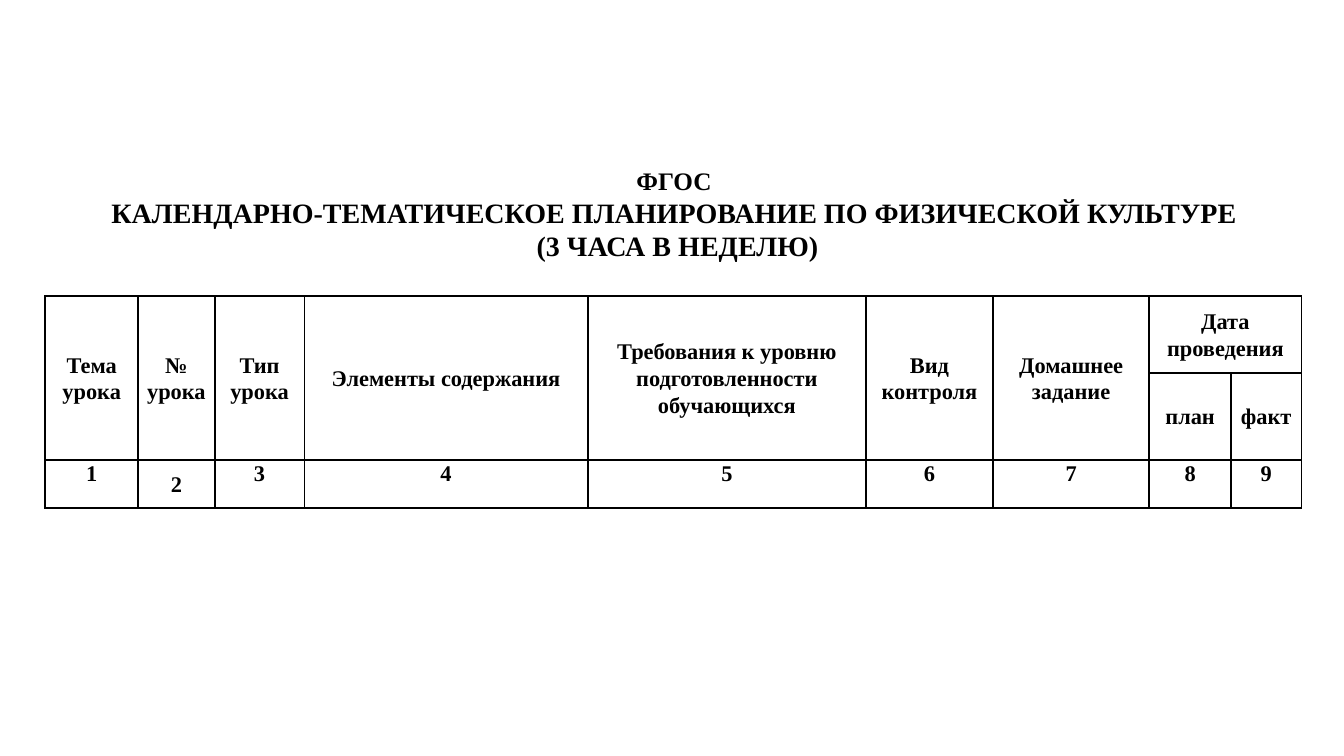
from dataclasses import dataclass

from lxml.etree import SubElement
from pptx import Presentation
from pptx.dml.color import RGBColor
from pptx.enum.text import MSO_ANCHOR, MSO_AUTO_SIZE, PP_ALIGN
from pptx.oxml.ns import qn
from pptx.slide import Slide
from pptx.table import Table, _Cell
from pptx.text.text import TextFrame
from pptx.util import Inches, Pt


@dataclass(frozen=True)
class Theme:
    font: str = "Times New Roman"
    ink: str = "000000"
    small_title: int = 18
    title: int = 20
    table: int = 16
    table_spacing: float = 1.07
    thick: float = 1.5
    thin: float = 1


@dataclass(frozen=True)
class Heading:
    text: str
    row: int
    column: int
    row_span: int = 1
    column_span: int = 1


THEME = Theme()
COLUMN_WIDTHS = (0.92, 0.76, 0.89, 2.81, 2.76, 1.26, 1.55, 0.81, 0.7)
ROW_HEIGHTS = (0.76, 0.86, 0.48)
PLAN, FACT = 7, 8
NUMBER_ROW = 2

TITLE_LINES = (
    ("ФГОС", THEME.small_title),
    ("КАЛЕНДАРНО-ТЕМАТИЧЕСКОЕ ПЛАНИРОВАНИЕ ПО ФИЗИЧЕСКОЙ КУЛЬТУРЕ", THEME.title),
    (" (3 ЧАСА В НЕДЕЛЮ)", THEME.title),
)
TALL_HEADINGS = (
    "Тема урока",
    "№\nурока",
    "Тип урока",
    "Элементы содержания",
    "Требования к уровню подготовленности обучающихся",
    "Вид контроля",
    "Домашнее задание",
)
HEADINGS = [
    *(Heading(text, 0, column, row_span=2) for column, text in enumerate(TALL_HEADINGS)),
    Heading("Дата проведения", 0, PLAN, column_span=2),
    Heading("план", 1, PLAN),
    Heading("факт", 1, FACT),
]


def write_lines(frame: TextFrame, lines: list[tuple[str, int]], spacing: float = 1) -> None:
    frame.text = "\n".join(text for text, _ in lines)
    for paragraph, (_, size) in zip(frame.paragraphs, lines):
        paragraph.alignment = PP_ALIGN.CENTER
        paragraph.line_spacing = spacing
        paragraph.font.name = THEME.font
        paragraph.font.size = Pt(size)
        paragraph.font.bold = True
        paragraph.font.color.rgb = RGBColor.from_string(THEME.ink)


def write_cell(cell: _Cell, text: str, anchor: MSO_ANCHOR) -> None:
    lines = [(line, THEME.table) for line in text.split("\n")]
    write_lines(cell.text_frame, lines, THEME.table_spacing)
    cell.vertical_anchor = anchor


def format_cell(cell: _Cell, row: int, column: int) -> None:
    # Lines inside the date block are thinner than the rest
    is_date = column >= PLAN
    thin_sides = {
        "lnL": column == FACT and row > 0,
        "lnR": column == PLAN and row > 0,
        "lnT": is_date and row == 1,
        "lnB": is_date and row == 0,
    }
    properties = cell._tc.get_or_add_tcPr()
    for side, is_thin in thin_sides.items():
        width = Pt(THEME.thin if is_thin else THEME.thick)
        line = SubElement(properties, qn(f"a:{side}"), w=str(width))
        fill = SubElement(line, qn("a:solidFill"))
        SubElement(fill, qn("a:srgbClr"), val=THEME.ink)
    cell.fill.background()
    cell.margin_left = cell.margin_right = Inches(0.07)
    cell.margin_top = cell.margin_bottom = 0


def add_title(slide: Slide) -> None:
    title = slide.shapes.title
    title.left, title.top = Inches(0.56), Inches(1.58)
    title.width, title.height = Inches(12.25), Inches(1.08)
    frame = title.text_frame
    write_lines(frame, TITLE_LINES)
    frame.word_wrap = True
    frame.auto_size = MSO_AUTO_SIZE.SHAPE_TO_FIT_TEXT
    frame.vertical_anchor = MSO_ANCHOR.MIDDLE


def add_plan_table(slide: Slide) -> Table:
    table = slide.shapes.add_table(
        len(ROW_HEIGHTS), len(COLUMN_WIDTHS), Inches(0.45), Inches(2.94),
        Inches(sum(COLUMN_WIDTHS)), Inches(sum(ROW_HEIGHTS)),
    ).table
    table.first_row = table.horz_banding = False
    for column, width in zip(table.columns, COLUMN_WIDTHS):
        column.width = Inches(width)
    for row, height in zip(table.rows, ROW_HEIGHTS):
        row.height = Inches(height)
    for row in range(len(ROW_HEIGHTS)):
        for column in range(len(COLUMN_WIDTHS)):
            format_cell(table.cell(row, column), row, column)

    # Headings, merged where they span cells
    for heading in HEADINGS:
        cell = table.cell(heading.row, heading.column)
        if heading.row_span * heading.column_span > 1:
            cell.merge(table.cell(heading.row + heading.row_span - 1,
                                  heading.column + heading.column_span - 1))
        write_cell(cell, heading.text, MSO_ANCHOR.MIDDLE)

    # Column numbers; only the lesson number is centred vertically
    for column in range(len(COLUMN_WIDTHS)):
        anchor = MSO_ANCHOR.MIDDLE if column == 1 else MSO_ANCHOR.TOP
        write_cell(table.cell(NUMBER_ROW, column), str(column + 1), anchor)
    return table


def main() -> None:
    presentation = Presentation()
    presentation.slide_width = Inches(13.33)
    presentation.slide_height = Inches(7.5)
    slide = presentation.slides.add_slide(presentation.slide_layouts.get_by_name("Title Only"))
    add_title(slide)
    add_plan_table(slide)
    presentation.save("out.pptx")


if __name__ == "__main__":
    main()
